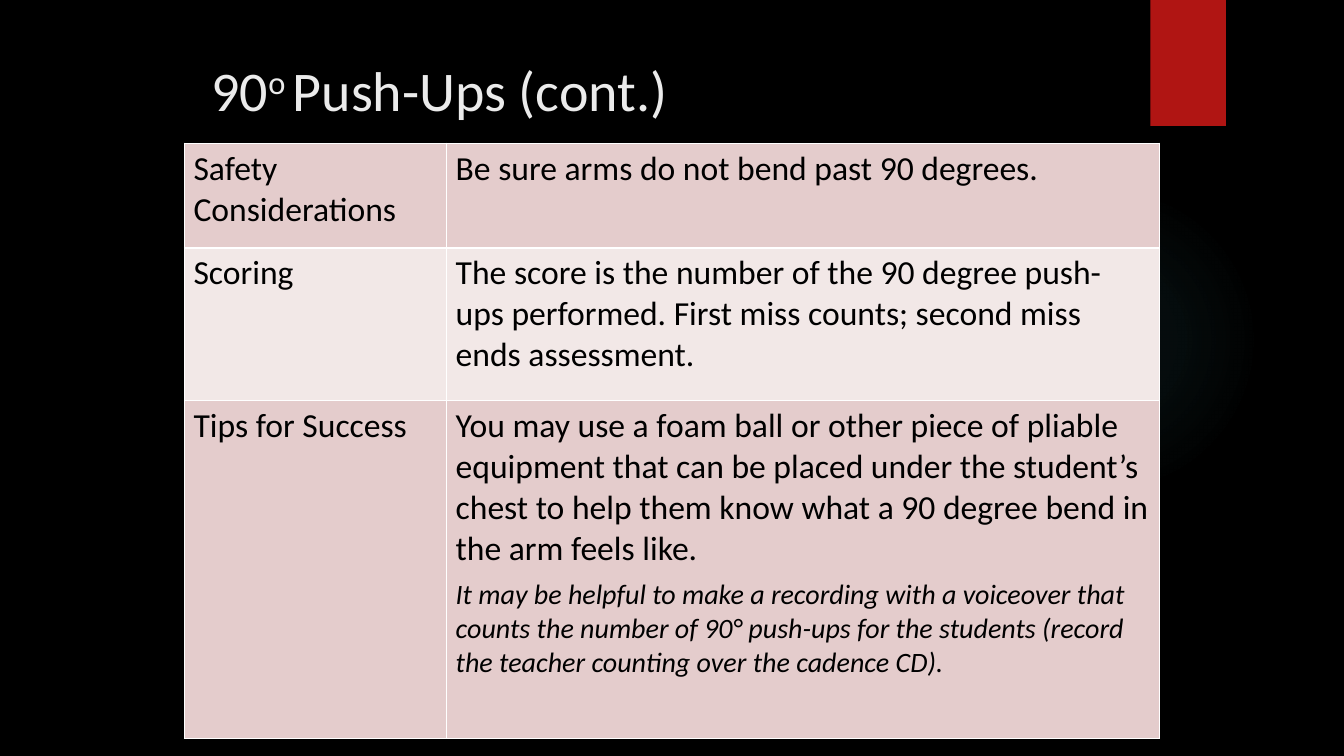
import pptx
import pptx.util
import pptx.oxml
import pptx.oxml.ns
import pptx.dml.color
import pptx.enum.shapes
import pptx.enum.text

PX = 9144  # 100 px to the inch
FONT = "Calibri"
HUES = {"back": "000000", "red": "B01513", "glow": "50B9C1", "title": "EBEBEB",
        "text": "000000", "dark": "E4CCCC", "light": "F2E8E7", "edge": "FFFFFF"}
BODY = {"size": 24}
NOTE = {"size": 20, "italic": True}
ROWS = [
    (104, "dark", "Safety Considerations",
     [("Be sure arms do not bend past 90 degrees.", BODY)]),
    (151, "light", "Scoring",
     [("The score is the number of the 90 degree push- ups performed. "
       "First miss counts; second miss ends assessment.", BODY)]),
    (336, "dark", "Tips for Success",
     [("You may use a foam ball or other piece of pliable equipment that can be "
       "placed under the student’s chest to help them know what a 90 degree "
       "bend in the arm feels like.", BODY),
      ("It may be helpful to make a recording with a voiceover that counts the "
       "number of 90° push-ups for the students (record the teacher counting "
       "over the cadence CD).", NOTE)]),
]


def rgb(name):
    return pptx.dml.color.RGBColor.from_string(HUES[name])


def emu(*sizes):
    return [size * PX for size in sizes]


def xml(text):
    return pptx.oxml.parse_xml(text.replace(">", f" {pptx.oxml.ns.nsdecls('a')}>", 1))


def paint(part, name):
    part.fill.solid()
    part.fill.fore_color.rgb = rgb(name)


def write(para, text, hue, form):
    run = para.add_run()
    run.text = text
    run.font.color.rgb = rgb(hue)
    for key, value in ({"name": FONT} | form).items():
        setattr(run.font, key, pptx.util.Pt(value) if key == "size" else value)
    return run


def shape(slide, kind, box):
    item = slide.shapes.add_shape(kind, *emu(*box))
    item.shadow.inherit = False
    item.line.fill.background()
    return item


def decor(slide, glow, tab):
    """Draw the faint round glow and the red tab at the top edge."""
    kinds = pptx.enum.shapes.MSO_SHAPE
    orb = shape(slide, kinds.OVAL, glow)
    stops = "".join(
        f'<a:gs pos="{pos}000"><a:srgbClr val="{HUES["glow"]}">'
        f'<a:alpha val="{alpha}000"/></a:srgbClr></a:gs>'
        for pos, alpha in [(0, 7), (36, 6), (69, 0), (100, 0)])
    fill = xml(f'<a:gradFill><a:gsLst>{stops}</a:gsLst><a:path path="circle">'
               '<a:fillToRect l="50000" t="50000" r="50000" b="50000"/>'
               '</a:path></a:gradFill>')
    orb.element.spPr.find(pptx.oxml.ns.qn("a:prstGeom")).addnext(fill)
    paint(shape(slide, kinds.RECTANGLE, tab), "red")


def title(slide, box):
    frame = slide.shapes.add_textbox(*emu(*box)).text_frame
    frame.word_wrap = True
    frame.vertical_anchor = pptx.enum.text.MSO_ANCHOR.TOP
    frame.margin_top = 5 * PX
    for text, lift in [("90", 0), ("o ", 30000), ("Push-Ups (cont.)", 0)]:
        run = write(frame.paragraphs[0], text, "title", {"size": 40})
        if lift:
            run.font._element.set("baseline", str(lift))


def cell_text(cell, paras, hue):
    paint(cell, hue)
    for side in ("left", "right"):
        setattr(cell, f"margin_{side}", 9 * PX)
    for side in ("top", "bottom"):
        setattr(cell, f"margin_{side}", 5 * PX)
    frame = cell.text_frame
    for num, (text, form) in enumerate(paras):
        para = frame.add_paragraph() if num else frame.paragraphs[0]
        if len(paras) > 1:
            para.space_after = pptx.util.Pt(6)
        write(para, text, "text", form)
    for num, side in enumerate("LRTB"):
        cell._tc.tcPr.insert(num, xml(
            f'<a:ln{side} w="12700"><a:solidFill><a:srgbClr val="{HUES["edge"]}"/>'
            f'</a:solidFill></a:ln{side}>'))


def grid(slide, box, split):
    """Fill the box with the table; split is the width of the label column."""
    table = slide.shapes.add_table(len(ROWS), 2, *emu(*box)).table
    table.first_row = table.horz_banding = False
    for col, wide in zip(table.columns, (split, box[2] - split)):
        col.width = wide * PX
    for row, (high, hue, label, paras) in zip(table.rows, ROWS):
        row.height = high * PX
        cell_text(row.cells[0], [(label, BODY)], hue)
        cell_text(row.cells[1], paras, hue)


def main():
    deck = pptx.Presentation()
    deck.slide_width, deck.slide_height = emu(1333, 750)
    slide = deck.slides.add_slide(deck.slide_layouts[6])
    paint(slide.background, "back")
    decor(slide, (941, 183, 308, 308), (1141, 0, 75, 125))
    title(slide, (200, 50, 812, 102))
    grid(slide, (183, 142, 967, 592), 260)
    deck.save("out.pptx")


if __name__ == "__main__":
    main()
